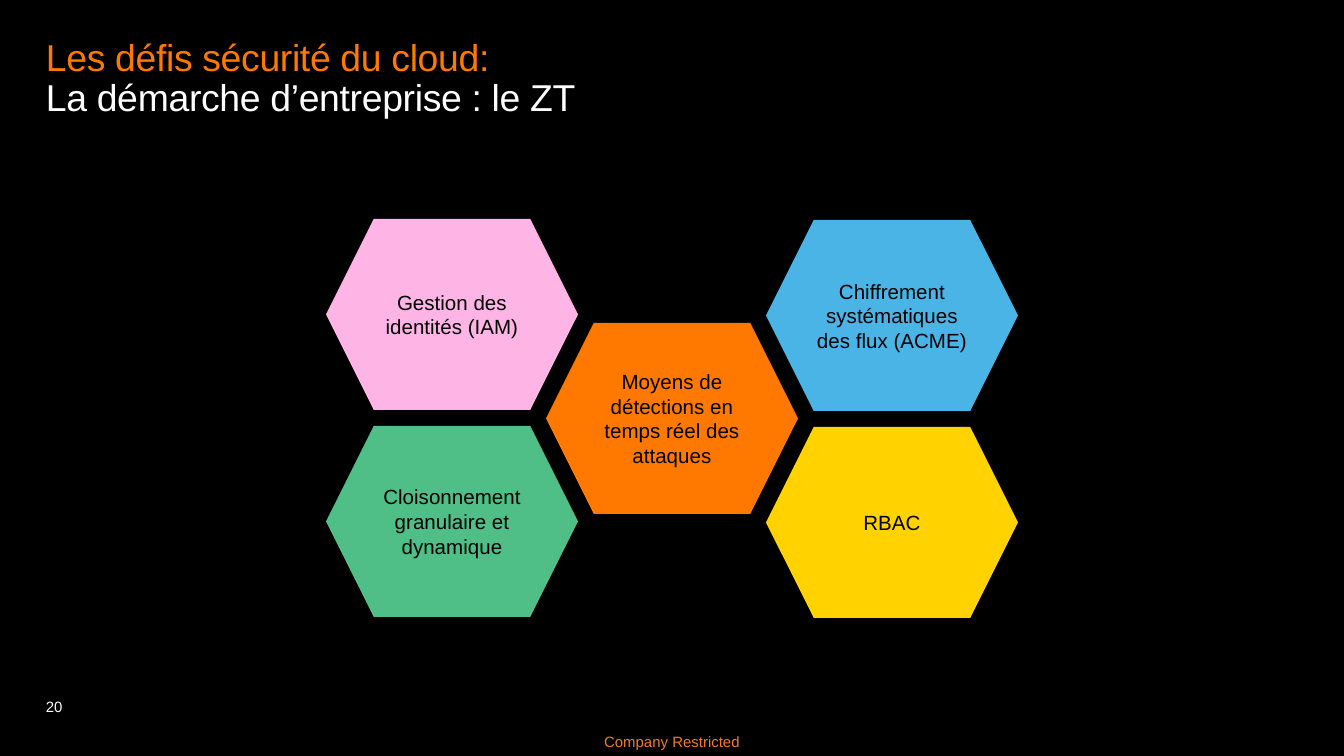
from pptx import Presentation
from pptx.dml.color import RGBColor
from pptx.enum.shapes import MSO_SHAPE as Shape
from pptx.enum.text import MSO_ANCHOR as Anchor, PP_ALIGN as Align
from pptx.util import Pt

PX = 9144000 / 1344
WIDTH, HEIGHT = 1344, 756
WHITE, BLACK, ORANGE = "FFFFFF", "000000", "FF7900"

TITLE = [("Les défis sécurité du cloud:", ORANGE),
         ("La démarche d’entreprise : le ZT", WHITE)]
PAGE_NUMBER = [("20", WHITE)]
CLASSIFICATION = [("Company Restricted", "ED7D31")]

# label, fill, column, top
PILLARS = [
    ("Gestion des identités (IAM)", "FFB4E6", 0, 219),
    ("Cloisonnement granulaire et dynamique", "50BE87", 0, 426),
    ("Moyens de détections en temps réel des attaques", ORANGE, 1, 323),
    ("Chiffrement systématiques des flux (ACME)", "4BB4E6", 2, 220),
    ("RBAC", "FFD200", 2, 427),
]
HEX_LEFT, HEX_STEP, HEX_WIDTH, HEX_HEIGHT = 326, 220, 252, 191


def px(*lengths):
    """Turn pixel lengths into EMU."""
    return [round(length * PX) for length in lengths]


def color(value):
    """Turn a hex string into a colour."""
    return RGBColor.from_string(value)


def write(holder, lines, *, size, align=Align.LEFT, anchor=Anchor.TOP,
          inset=None, spacing=None, tracking=None):
    """Fill a shape with coloured lines of one paragraph."""
    frame = holder.text_frame
    frame.word_wrap = True
    frame.vertical_anchor = anchor
    if inset is not None:
        frame.margin_left = frame.margin_right = inset
        frame.margin_top = frame.margin_bottom = inset
    paragraph = frame.paragraphs[0]
    paragraph.alignment = align
    if spacing:
        paragraph.line_spacing = spacing
    for index, (words, ink) in enumerate(lines):
        if index:
            paragraph.add_line_break()
        run = paragraph.add_run()
        run.text = words
        run.font.name = "Arial"
        run.font.size = Pt(size)
        run.font.color.rgb = color(ink)
        if tracking:
            run._r.get_or_add_rPr().set("spc", str(tracking))


def main():
    """Build the slide and save it."""
    deck = Presentation()
    deck.slide_width, deck.slide_height = px(WIDTH, HEIGHT)
    slide = deck.slides.add_slide(deck.slide_layouts[6])
    slide.background.fill.solid()
    slide.background.fill.fore_color.rgb = color(BLACK)
    shapes = slide.shapes

    write(shapes.add_textbox(*px(46, 667, 40, 49)), PAGE_NUMBER,
          size=8, anchor=Anchor.BOTTOM, inset=0, spacing=0.85)
    write(shapes.add_textbox(*px(588, 726, 168, 30)), CLASSIFICATION,
          size=8, align=Align.CENTER, anchor=Anchor.MIDDLE, inset=0)
    write(shapes.add_textbox(*px(46, 39, 1251, 109)), TITLE,
          size=20, inset=0, spacing=0.9, tracking=-20)

    for label, fill, column, top in PILLARS:
        left = HEX_LEFT + column * HEX_STEP
        pillar = shapes.add_shape(Shape.HEXAGON, *px(left, top, HEX_WIDTH, HEX_HEIGHT))
        pillar.shadow.inherit = False
        pillar.fill.solid()
        pillar.fill.fore_color.rgb = color(fill)
        pillar.line.fill.background()
        write(pillar, [(label, BLACK)], size=11, align=Align.CENTER, anchor=Anchor.MIDDLE)

    deck.save("out.pptx")


if __name__ == "__main__":
    main()
